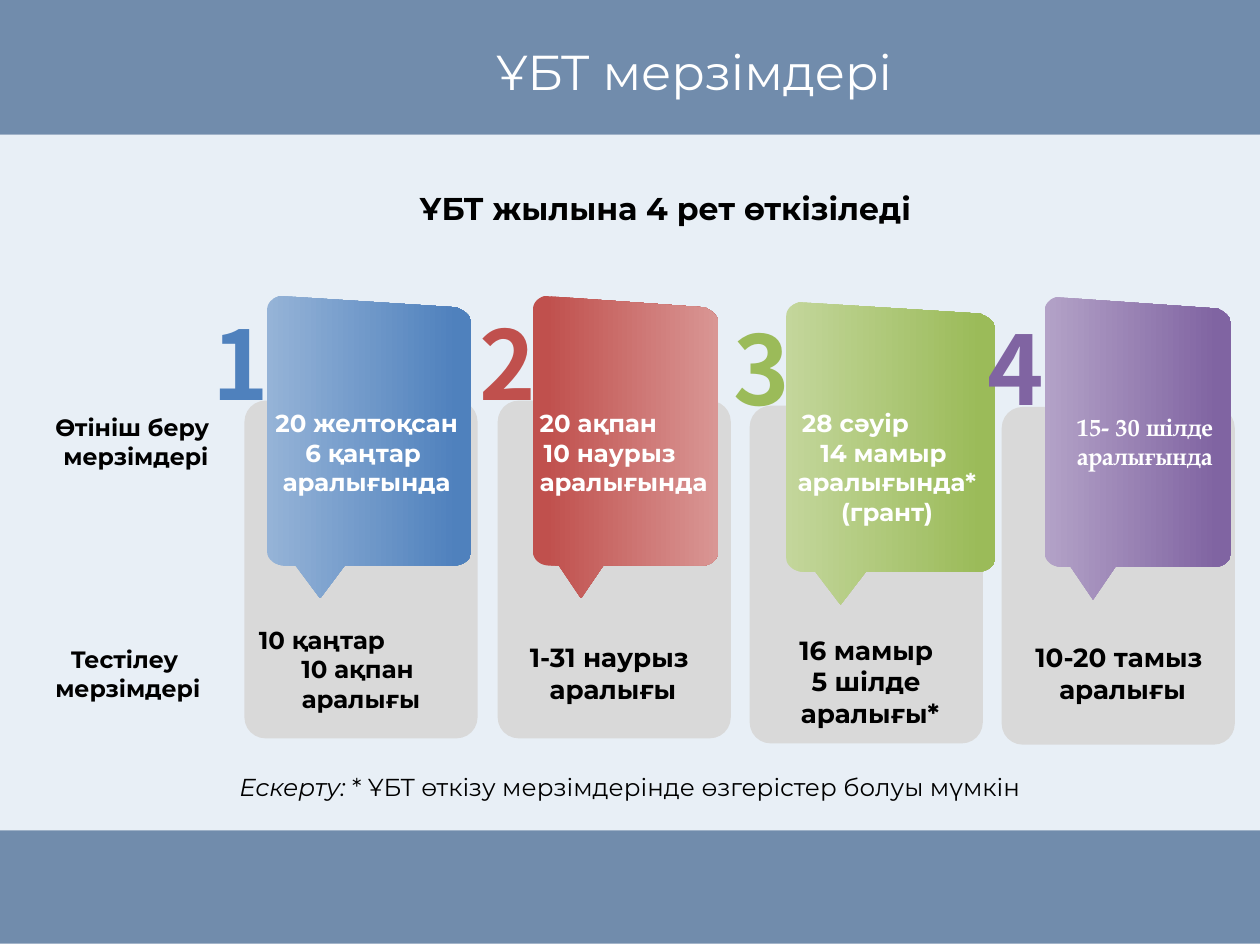
from lxml import etree
from pptx import Presentation
from pptx.dml.color import RGBColor
from pptx.enum.shapes import MSO_SHAPE
from pptx.enum.text import PP_ALIGN
from pptx.oxml.ns import qn
from pptx.util import Inches, Pt

RECTANGLE, ROUNDED = MSO_SHAPE.RECTANGLE, MSO_SHAPE.ROUNDED_RECTANGLE
LEFT, CENTER = PP_ALIGN.LEFT, PP_ALIGN.CENTER

COLORS = {
    "navy": "1F497D", "pale": "DCE6F2", "card": "D9D9D9",
    "white": "FFFFFF", "black": "000000",
    "blue": "4F81BD", "light blue": "95B3D7",
    "red": "C0504D", "light red": "D99694",
    "green": "9BBB59", "light green": "C3D69B",
    "purple": "8064A2", "light purple": "B3A2C7",
}
BODY, DIGIT, SERIF = "Montserrat", "Noto Sans CJK KR", "TeX Gyre Pagella"
BOX_INSETS = (0.08, 0.04)
DEFAULT_INSETS = (0.1, 0.05)

BANDS = [(1.07, 5.52, "pale"), (0, 1.07, "navy"), (6.59, 0.9, "navy")]

ROUNDS = [
    dict(
        color="blue", card=(1.94, 3.18), bubble=(2.12, 2.35, 1.62), digit=(1.61, 2.38),
        apply_box=(2.1, 3.2, 1.62, 0.78), apply_font=BODY,
        apply=[("20 желтоқсан", 0), ("6 қаңтар ", 0), ("аралығында", 0)],
        test_box=(1.94, 4.92, 1.85, 0.78), test_size=14,
        test=[("10 қаңтар", -0.31), ("10 ақпан ", 0), ("аралығы", 0)],
    ),
    dict(
        color="red", card=(3.95, 3.18), bubble=(4.23, 2.35, 1.47), digit=(3.73, 2.38),
        apply_box=(4.18, 3.2, 1.54, 0.78), apply_font=BODY,
        apply=[("20 ақпан", -0.2), ("10 наурыз", -0.11), ("аралығында", 0)],
        test_box=(3.97, 5.05, 1.79, 0.58), test_size=15,
        test=[("1-31 наурыз ", 0), ("аралығы", 0)],
    ),
    dict(
        color="green", card=(5.95, 3.22), bubble=(6.24, 2.4, 1.66), digit=(5.74, 2.42),
        apply_box=(6.24, 3.2, 1.6, 1.02), apply_font=BODY,
        apply=[("28 сәуір", -0.25), ("14 мамыр ", 0), ("аралығында*", 0), ("(грант)", 0)],
        test_box=(6.01, 4.99, 1.79, 0.83), test_size=15,
        test=[("16 мамыр ", 0), ("5 шілде ", 0), ("аралығы*", 0)],
    ),
    dict(
        color="purple", card=(7.95, 3.23), bubble=(8.29, 2.36, 1.48), digit=(7.76, 2.42),
        apply_box=(8.38, 3.23, 1.41, 0.55), apply_font=SERIF,
        apply=[("15- 30 шілде аралығында", 0)],
        test_box=(7.95, 5.05, 1.92, 0.58), test_size=15,
        test=[("10-20 тамыз ", 0), ("аралығы", 0)],
    ),
]
ROW_LABELS = [
    ((0.28, 3.24, 1.6, 0.53), [("Өтініш беру", -0.03), ("мерзімдері", 0)]),
    ((0.1, 5.08, 1.83, 0.53), [("Тестілеу ", 0), ("мерзімдері", 0)]),
]

BUBBLE_START = (0.07, 0)
BUBBLE_STEPS = [
    [(0.93, 0.09)], [(0.94, 0.1)],
    [(0.97, 0.12), (1, 0.16), (1, 0.21)],
    [(1, 2.03)],
    [(1, 2.09), (0.96, 2.14), (0.91, 2.14)],
    [(0.38, 2.14)], [(0.26, 2.4)], [(0.14, 2.14)], [(0.09, 2.14)],
    [(0.04, 2.14), (0, 2.09), (0, 2.03)],
    [(0, 0.11)],
    [(0, 0.06), (0.02, 0.02), (0.06, 0)],
]


def rgb(name):
    return RGBColor.from_string(COLORS[name])


def add_block(slide, kind, box, color):
    shape = slide.shapes.add_shape(kind, *map(Inches, box))
    shape.shadow.inherit = False
    shape.fill.solid()
    shape.fill.fore_color.rgb = rgb(color)
    shape.line.fill.background()
    return shape


def add_band(slide, top, height, color):
    shape = add_block(slide, RECTANGLE, (0, top, 10, height), color)
    color_node = shape.element.spPr.find(qn("a:solidFill"))[0]
    etree.SubElement(color_node, qn("a:alpha"), val="63000")


def bubble_points(steps=8):
    points = [BUBBLE_START]
    for step in BUBBLE_STEPS:
        if len(step) == 1:
            points += step
            continue
        curve = [points[-1], *step]
        for index in range(1, steps + 1):
            t = index / steps
            weights = ((1 - t) ** 3, 3 * t * (1 - t) ** 2, 3 * t * t * (1 - t), t ** 3)
            points.append(tuple(sum(w * p[axis] for w, p in zip(weights, curve)) for axis in (0, 1)))
    return points


def add_bubble(slide, left, top, width, color):
    points = [(Inches(left + x * width), Inches(top + y)) for x, y in bubble_points()]
    builder = slide.shapes.build_freeform(*points[0])
    builder.add_line_segments(points[1:], close=True)
    shape = builder.convert_to_shape()
    shape.shadow.inherit = False
    shape.line.fill.background()
    shape.fill.gradient()
    shape.fill.gradient_angle = 0
    stops = [(0, "light " + color), (0.93, color)]
    if color == "red":
        stops = [(0.07, color), (1, "light " + color)]
    for stop, (position, name) in zip(shape.fill.gradient_stops, stops):
        stop.position = position
        stop.color.rgb = rgb(name)


def add_run(paragraph, text, size, color, font=BODY, bold=False, italic=False):
    run = paragraph.add_run()
    run.text = text
    run.font.size = Pt(size)
    run.font.name = font
    run.font.bold = bold
    run.font.italic = italic
    run.font.color.rgb = rgb(color)
    properties = run._r.get_or_add_rPr()
    for tag in ("a:ea", "a:cs"):
        etree.SubElement(properties, qn(tag), typeface=font)


def shift_line(paragraph, shift):
    properties = paragraph._p.get_or_add_pPr()
    properties.set("marL", str(Inches(max(0, 2 * shift))))
    properties.set("marR", str(Inches(max(0, -2 * shift))))
    properties.set("indent", "0")


def add_text(slide, box, lines, size, color, font=BODY, bold=True, align=CENTER,
             insets=BOX_INSETS, wrap=True):
    frame = slide.shapes.add_textbox(*map(Inches, box)).text_frame
    frame.word_wrap = wrap
    frame.margin_left = frame.margin_right = Inches(insets[0])
    frame.margin_top = frame.margin_bottom = Inches(insets[1])
    for index, (text, shift) in enumerate(lines):
        paragraph = frame.add_paragraph() if index else frame.paragraphs[0]
        paragraph.alignment = align
        shift_line(paragraph, shift)
        add_run(paragraph, text, size, color, font, bold)
    return frame


def main():
    presentation = Presentation()
    presentation.slide_width, presentation.slide_height = Inches(10), Inches(7.5)
    slide = presentation.slides.add_slide(presentation.slide_layouts[6])

    for band in BANDS:
        add_band(slide, *band)
    for item in ROUNDS:
        card = add_block(slide, ROUNDED, (*item["card"], 1.85, 2.68), "card")
        card.adjustments[0] = 0.09
        add_bubble(slide, *item["bubble"], item["color"])
    for box, lines in ROW_LABELS:
        add_text(slide, box, lines, 13.5, "black")
    for number, item in enumerate(ROUNDS, 1):
        add_text(slide, item["apply_box"], item["apply"], 14, "white", item["apply_font"])
        add_text(slide, item["test_box"], item["test"], item["test_size"], "black")
        add_text(slide, (*item["digit"], 0.6, 1), [(str(number), 0)], 54.7, item["color"],
                 DIGIT, align=LEFT, wrap=False)

    add_text(slide, (3.84, 0.28, 3.6, 0.57), [("ҰБТ мерзімдері", 0)], 28, "white",
             bold=False, align=LEFT, insets=DEFAULT_INSETS, wrap=False)
    add_text(slide, (3.21, 1.45, 4.14, 0.4), [("ҰБТ жылына 4 рет өткізіледі", 0)], 18, "black",
             insets=DEFAULT_INSETS, wrap=False)
    note = add_text(slide, (0.12, 6.08, 9.76, 0.34), [], 14, "black", insets=DEFAULT_INSETS)
    paragraph = note.paragraphs[0]
    paragraph.alignment = CENTER
    add_run(paragraph, "Ескерту:", 14, "black", italic=True)
    add_run(paragraph, " * ҰБТ өткізу мерзімдерінде өзгерістер болуы мүмкін", 14, "black")
    presentation.save("out.pptx")


if __name__ == "__main__":
    main()
